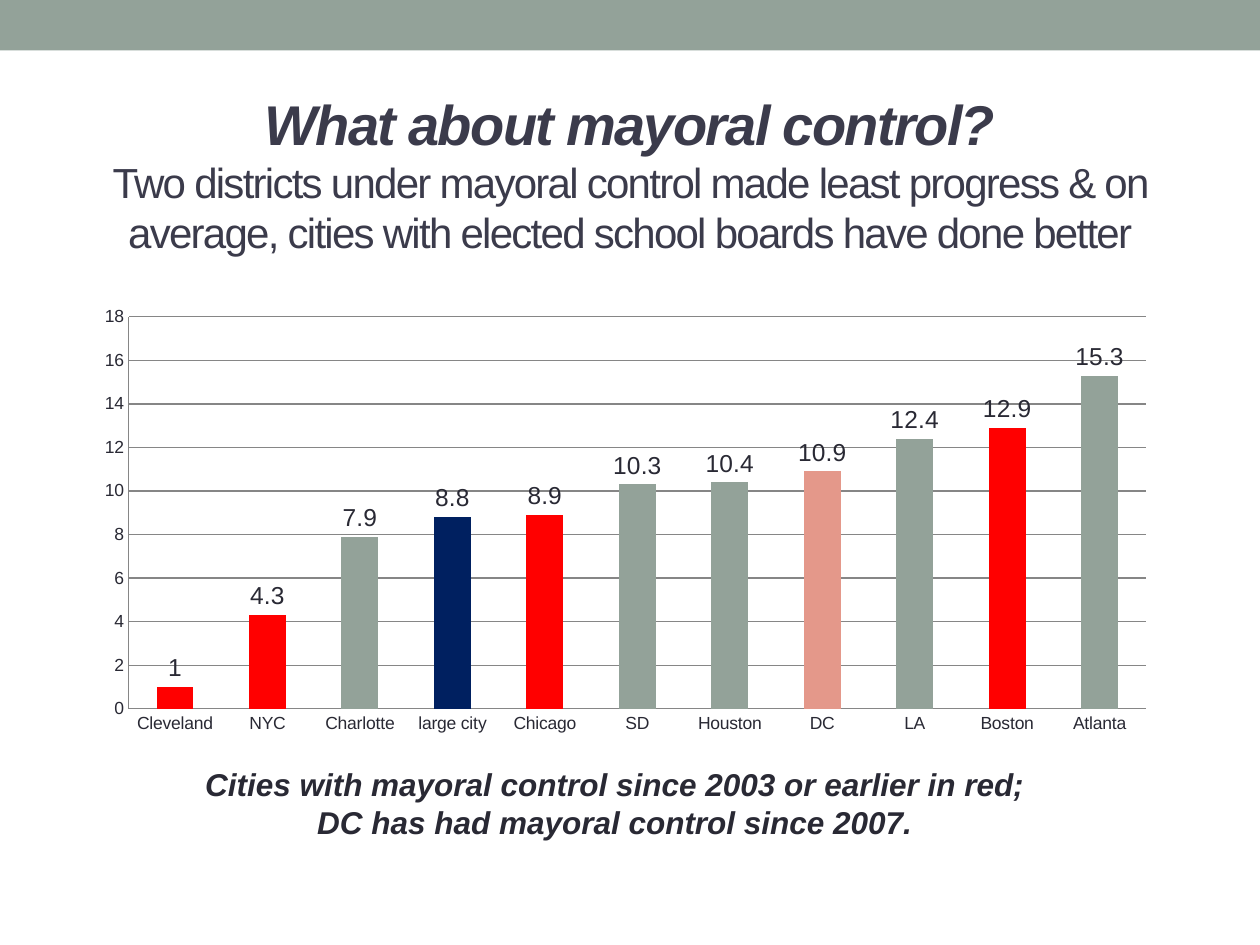
import pptx
import pptx.chart.data
import pptx.dml.color
import pptx.enum.chart
import pptx.enum.shapes
import pptx.enum.text
import pptx.oxml
import pptx.util
from pptx.util import Inches

# Content
HEAD = "What about mayoral control?"
SUB = ("Two districts under mayoral control made least progress & on average, "
       "cities with elected school boards have done better")
NOTE = ["Cities with mayoral control since 2003 or earlier in red;",
        "DC has had mayoral control since 2007."]
GAINS = [  # city, gain, colour role
    ("Cleveland", 1, "mayor"), ("NYC", 4.3, "mayor"), ("Charlotte", 7.9, "base"),
    ("large city", 8.8, "group"), ("Chicago", 8.9, "mayor"), ("SD", 10.3, "base"),
    ("Houston", 10.4, "base"), ("DC", 10.9, "late"), ("LA", 12.4, "base"),
    ("Boston", 12.9, "mayor"), ("Atlanta", 15.3, "base"),
]
PLOT = {"x": 0.058, "y": 0.13, "w": 0.897, "h": 0.543}
THEME = {
    "font": "Arial",
    "base": "93A299", "mayor": "FF0000", "group": "002060", "late": "E4988A",
    "title": "3B3B4B", "text": "292934", "grid": "868686",
    "head": 32, "sub": 24, "note": 18, "label": 14, "axis": 10,
}


def tint(role):
    return pptx.dml.color.RGBColor.from_string(THEME[role])


def style(font, size, role):
    font.name = THEME["font"]
    font.size = pptx.util.Pt(THEME[size])
    font.color.rgb = tint(role)


def paint(fill, role):
    fill.solid()
    fill.fore_color.rgb = tint(role)


def place(shape, left, top, width, height):
    shape.left, shape.top = Inches(left), Inches(top)
    shape.width, shape.height = Inches(width), Inches(height)


def add_band(slide):
    band = slide.shapes.add_shape(pptx.enum.shapes.MSO_SHAPE.RECTANGLE,
                                  0, 0, Inches(10), Inches(0.4))
    band.shadow.inherit = False
    paint(band.fill, "base")
    band.line.fill.background()


def add_title(slide):
    title = slide.shapes.title
    place(title, 0.5, 0.89, 9, 1.37)
    frame = title.text_frame
    frame.word_wrap = True
    frame.auto_size = pptx.enum.text.MSO_AUTO_SIZE.NONE
    frame.vertical_anchor = pptx.enum.text.MSO_ANCHOR.MIDDLE
    frame.margin_bottom = Inches(0.45)  # lifts the text clear of the chart
    para = frame.paragraphs[0]
    para.alignment = pptx.enum.text.PP_ALIGN.CENTER
    for text, size, strong in [(HEAD, "head", True), (SUB, "sub", False)]:
        if para.runs:
            para.add_line_break()
        run = para.add_run()
        run.text = text
        style(run.font, size, "title")
        run.font.bold = run.font.italic = strong
        run._r.get_or_add_rPr().set("spc", "-100")  # tight letters


def add_bars(slide):
    data = pptx.chart.data.CategoryChartData()
    data.categories = [city for city, _, _ in GAINS]
    data.add_series("Series 1", [gain for _, gain, _ in GAINS])
    kind = pptx.enum.chart.XL_CHART_TYPE.COLUMN_CLUSTERED
    chart = slide.shapes.add_chart(kind, Inches(0.5), Inches(1.77),
                                   Inches(9), Inches(5.73), data).chart
    chart.has_legend = chart.has_title = False
    style(chart.font, "axis", "text")

    # Axes
    cats, vals = chart.category_axis, chart.value_axis
    vals.minimum_scale, vals.maximum_scale, vals.major_unit = 0, 18, 2
    vals.has_major_gridlines = True
    for axis in (cats, vals):
        axis.major_tick_mark = pptx.enum.chart.XL_TICK_MARK.NONE
    for line in (cats.format.line, vals.format.line,
                 vals.major_gridlines.format.line):
        line.color.rgb = tint("grid")
        line.width = pptx.util.Pt(0.75)

    # Bars and their labels
    plot = chart.plots[0]
    plot.gap_width = 150
    plot.vary_by_categories = False
    bars = plot.series[0]
    paint(bars.format.fill, "base")
    for i, (_, _, role) in enumerate(GAINS):
        if role != "base":
            paint(bars.points[i].format.fill, role)
    labels = bars.data_labels
    labels.show_value = True
    labels.position = pptx.enum.chart.XL_LABEL_POSITION.OUTSIDE_END
    style(labels.font, "label", "text")

    # Fixed inner plot area
    area = chart._chartSpace.chart.plotArea
    for old in area.findall(pptx.oxml.ns.qn("c:layout")):
        area.remove(old)
    modes = "".join(f'<c:{k}Mode val="edge"/>' for k in "xy")
    sizes = "".join(f'<c:{k} val="{v}"/>' for k, v in PLOT.items())
    area.insert(0, pptx.oxml.parse_xml(
        f'<c:layout {pptx.oxml.ns.nsdecls("c")}><c:manualLayout>'
        f'<c:layoutTarget val="inner"/>{modes}{sizes}'
        '</c:manualLayout></c:layout>'))


def add_note(slide):
    box = slide.shapes.add_textbox(Inches(1.11), Inches(6.02),
                                   Inches(7.54), Inches(0.71))
    frame = box.text_frame
    frame.word_wrap = True
    frame.auto_size = pptx.enum.text.MSO_AUTO_SIZE.SHAPE_TO_FIT_TEXT
    frame.text = "\n".join(NOTE)
    for para in frame.paragraphs:
        para.alignment = pptx.enum.text.PP_ALIGN.CENTER
        style(para.font, "note", "text")
        para.font.bold = para.font.italic = True


def main():
    deck = pptx.Presentation()
    deck.slide_width, deck.slide_height = Inches(10), Inches(7.5)
    slide = deck.slides.add_slide(deck.slide_layouts[5])
    add_band(slide)
    add_title(slide)
    add_bars(slide)
    add_note(slide)
    deck.save("out.pptx")


if __name__ == "__main__":
    main()
